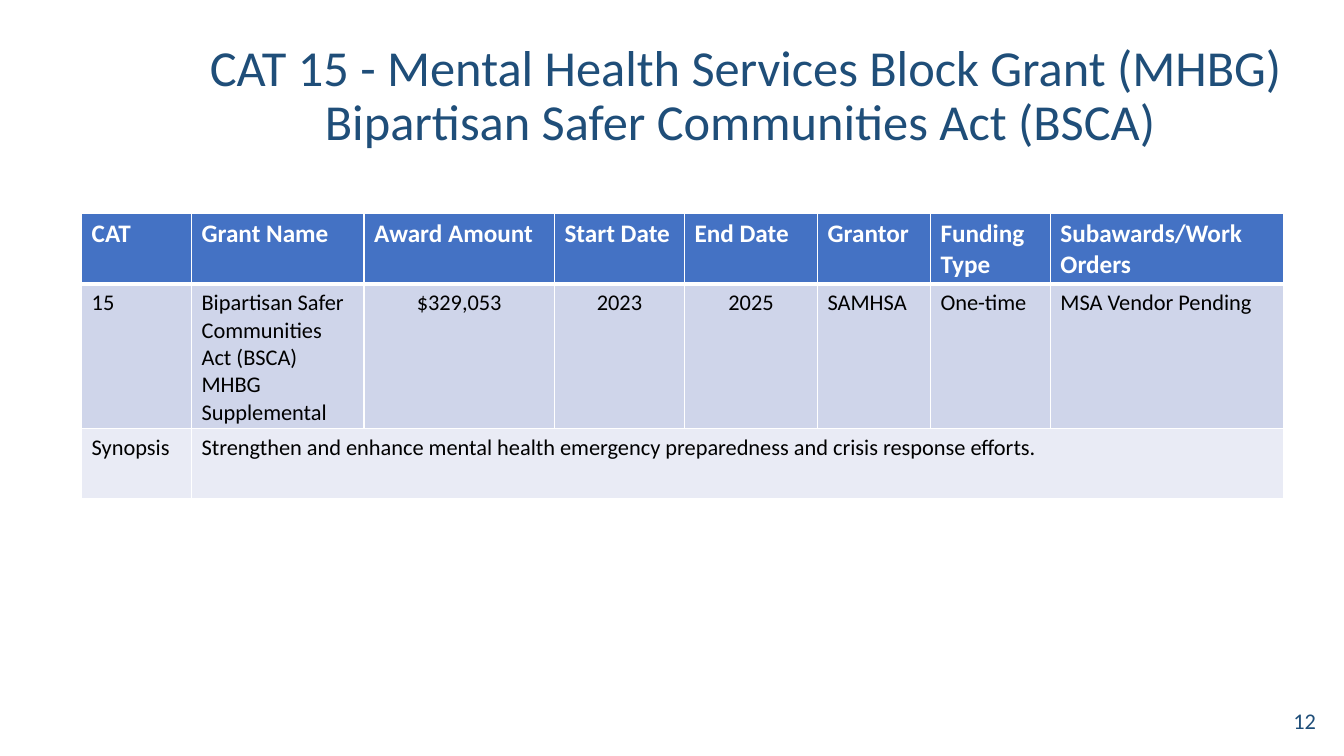
from lxml import etree
from pptx import Presentation, util as u
from pptx.dml.color import RGBColor
from pptx.enum import text
from pptx.oxml import ns

WIDTH, HEIGHT = 13.33, 7.5
FONT = "Calibri"
NAVY, BLUE, WHITE, BLACK = "1F4E79", "4472C4", "FFFFFF", "000000"
LEFT, CENTER, RIGHT = text.PP_ALIGN.LEFT, text.PP_ALIGN.CENTER, text.PP_ALIGN.RIGHT

TITLE = "CAT 15 - Mental Health Services Block Grant (MHBG) Bipartisan Safer Communities Act (BSCA) "
PAGE_NUMBER = "12"

# heading, column width, alignment of the grant's value, value
COLUMNS = [
    ("CAT", 1.09, LEFT, "15"),
    ("Grant Name", 1.71, LEFT, "Bipartisan Safer Communities Act (BSCA) MHBG Supplemental"),
    ("Award Amount", 1.89, CENTER, "$329,053"),
    ("Start Date", 1.29, CENTER, "2023"),
    ("End Date", 1.32, CENTER, "2025"),
    ("Grantor", 1.12, LEFT, "SAMHSA"),
    ("Funding Type", 1.19, LEFT, "One-time"),
    ("Subawards/Work Orders", 2.31, LEFT, "MSA Vendor Pending"),
]
SYNOPSIS = [
    "Synopsis",
    "Strengthen and enhance mental health emergency preparedness and crisis response efforts.",
]
ROW_HEIGHTS = [0.7, 1.43, 0.69]
ROW_FILLS = [BLUE, "CFD5EA", "E9EBF5"]
TABLE_LEFT, TABLE_TOP = 0.81, 2.12
MARGIN = 0.18


def color(value):
    return RGBColor.from_string(value)


def write(frame, words, size, ink, align, bold=False):
    paragraph = frame.paragraphs[0]
    paragraph.alignment = align
    run = paragraph.add_run()
    run.text = words
    run.font.name, run.font.size, run.font.bold = FONT, u.Pt(size), bold
    run.font.color.rgb = color(ink)
    return paragraph


def add_label(slide, left, top, width, height, words, size, align):
    """Add a vertically centred navy text box."""
    frame = slide.shapes.add_textbox(*map(u.Inches, (left, top, width, height))).text_frame
    frame.word_wrap = True
    frame.vertical_anchor = text.MSO_ANCHOR.MIDDLE
    return write(frame, words, size, NAVY, align)


def set_borders(cell, top, bottom):
    """Draw white borders; top and bottom are widths in points."""
    properties = cell._tc.get_or_add_tcPr()
    sides = [("lnL", 1), ("lnR", 1), ("lnT", top), ("lnB", bottom)]
    for position, (side, points) in enumerate(sides):
        line = etree.Element(ns.qn("a:" + side), w=str(u.Pt(points)))
        fill = etree.SubElement(line, ns.qn("a:solidFill"))
        etree.SubElement(fill, ns.qn("a:srgbClr"), val=WHITE)
        properties.insert(position, line)


def add_grant_table(slide):
    headings, widths, alignments, values = zip(*COLUMNS)
    rows = [headings, values, SYNOPSIS]
    table = slide.shapes.add_table(
        len(rows), len(COLUMNS), u.Inches(TABLE_LEFT), u.Inches(TABLE_TOP),
        u.Inches(sum(widths)), u.Inches(sum(ROW_HEIGHTS))).table
    table.horz_banding = False
    for column, width in zip(table.columns, widths):
        column.width = u.Inches(width)
    for r, words in enumerate(rows):
        table.rows[r].height = u.Inches(ROW_HEIGHTS[r])
        header = r == 0
        for c in range(len(COLUMNS)):
            cell = table.cell(r, c)
            cell.fill.solid()
            cell.fill.fore_color.rgb = color(ROW_FILLS[r])
            set_borders(cell, top=3 if r == 1 else 1, bottom=3 if header else 1)
            if c < len(words):
                write(cell.text_frame, words[c], 18 if header else 16,
                      WHITE if header else BLACK,
                      alignments[c] if r == 1 else LEFT, header)
    last = len(rows) - 1
    table.cell(last, 1).merge(table.cell(last, len(COLUMNS) - 1))


def main():
    presentation = Presentation()
    presentation.slide_width, presentation.slide_height = u.Inches(WIDTH), u.Inches(HEIGHT)
    slide = presentation.slides.add_slide(presentation.slide_layouts[6])
    title = add_label(slide, WIDTH - MARGIN - 11.5, 0.55, 11.5, 0.83, TITLE, 36, CENTER)
    title.line_spacing = 0.9
    add_label(slide, WIDTH - MARGIN - 3, 6.95, 3, 0.4, PAGE_NUMBER, 16, RIGHT)
    add_grant_table(slide)
    presentation.save("out.pptx")


if __name__ == "__main__":
    main()
